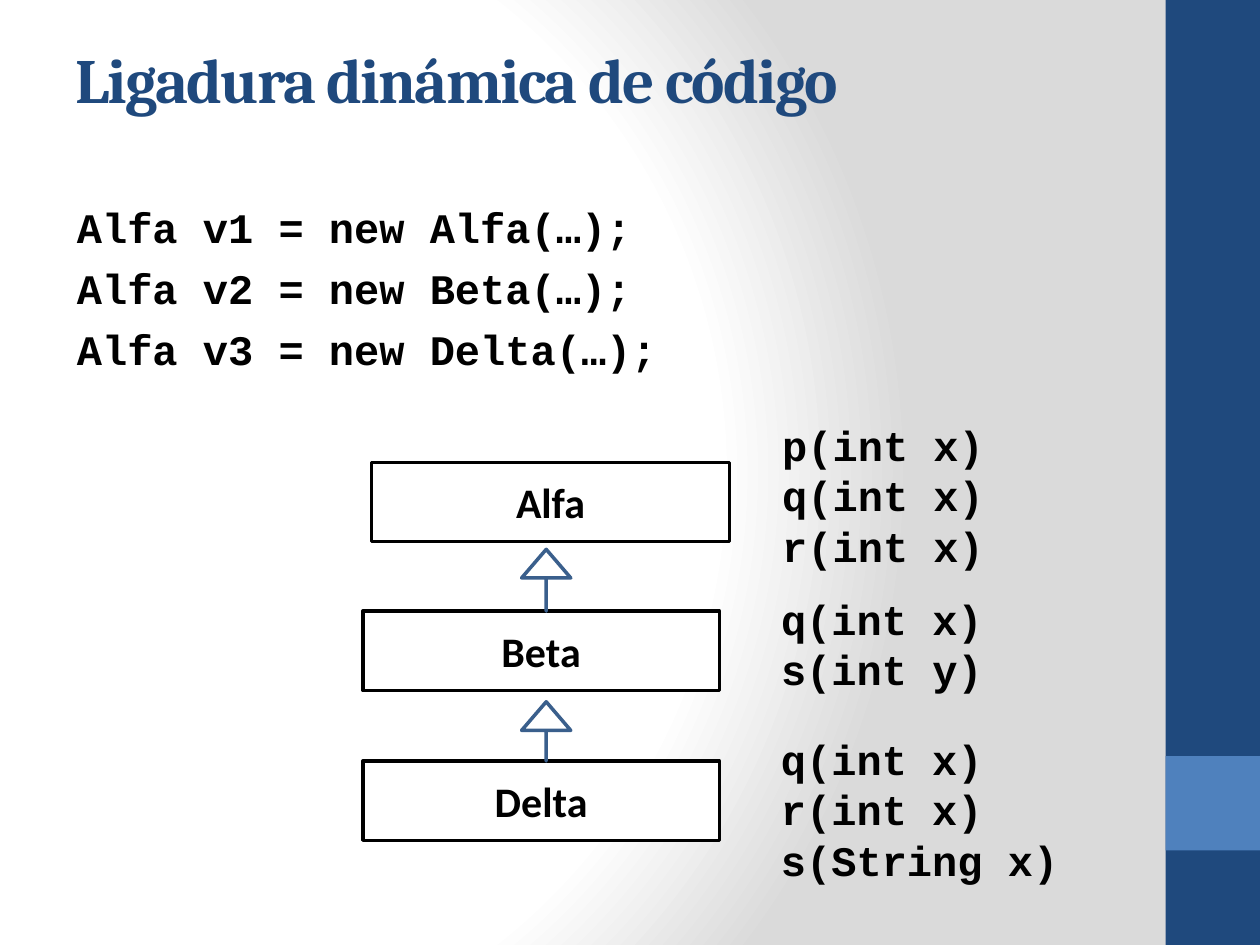
import pptx
import pptx.dml.color
import pptx.enum.shapes
import pptx.enum.text
import pptx.oxml
import pptx.oxml.ns
import pptx.util
from dataclasses import dataclass
from pptx.util import Inches

SHAPES = pptx.enum.shapes.MSO_SHAPE
ALIGN = pptx.enum.text.PP_ALIGN
ANCHOR = pptx.enum.text.MSO_ANCHOR
AUTO_SIZE = pptx.enum.text.MSO_AUTO_SIZE


@dataclass(frozen=True)
class Theme:
    navy: str = "1F497D"
    blue: str = "4F81BD"
    arrow: str = "3A5F8C"
    black: str = "000000"
    white: str = "FFFFFF"
    grey: str = "DADADA"
    title_font: str = "Cambria"
    box_font: str = "Calibri"
    code_font: str = "Courier New"
    title_size: int = 36
    text_size: int = 24
    code_pitch: float = 28.8
    outline: int = 2


THEME = Theme()


def rgb(value):
    return pptx.dml.color.RGBColor.from_string(value)


def add_run(paragraph, text, font, size, color):
    run = paragraph.add_run()
    run.text = text
    run.font.name = font
    run.font.size = pptx.util.Pt(size)
    run.font.bold = True
    run.font.color.rgb = rgb(color)
    return run


def place(shape, left, top, width, height):
    shape.left, shape.top = Inches(left), Inches(top)
    shape.width, shape.height = Inches(width), Inches(height)


def set_background(slide):
    """Circular gradient from white to grey."""
    slide.background.fill.gradient()
    old = next(slide.element.iter(pptx.oxml.ns.qn("a:gradFill")))
    stops = "".join(
        f'<a:gs pos="{position * 1000}"><a:srgbClr val="{color}"/></a:gs>'
        for position, color in ((0, THEME.white), (75, THEME.white), (100, THEME.grey)))
    gradient = pptx.oxml.parse_xml(
        f'<a:gradFill {pptx.oxml.ns.nsdecls("a")} rotWithShape="1"><a:gsLst>{stops}</a:gsLst>'
        '<a:path path="circle"><a:fillToRect l="20000" t="50000" r="100000" b="50000"/>'
        '</a:path></a:gradFill>')
    old.getparent().replace(old, gradient)


def add_figure(slide, kind, frame, fill, line=None):
    shape = slide.shapes.add_shape(kind, *map(Inches, frame))
    shape.shadow.inherit = False
    shape.fill.solid()
    shape.fill.fore_color.rgb = rgb(fill)
    if line:
        shape.line.color.rgb = rgb(line)
        shape.line.width = pptx.util.Pt(THEME.outline)
    else:
        shape.line.fill.background()
    return shape


def add_class_box(slide, name, left, top, width):
    box = add_figure(slide, SHAPES.RECTANGLE, (left, top, width, 0.63), THEME.white, THEME.black)
    box.text_frame.word_wrap = False
    box.text_frame.vertical_anchor = ANCHOR.MIDDLE
    paragraph = box.text_frame.paragraphs[0]
    paragraph.alignment = ALIGN.CENTER
    add_run(paragraph, name, THEME.box_font, THEME.text_size, THEME.black)


def add_inheritance_arrow(slide, left, top, length):
    """Hollow triangle on a thin stem, turned to point upward."""
    arrow = add_figure(slide, SHAPES.LEFT_ARROW, (left, top, length, 0.39),
                       THEME.white, THEME.arrow)
    arrow.adjustments[0] = 0
    arrow.adjustments[1] = 0.583
    arrow.rotation = 90


def write_code(frame, lines, space_before=0):
    frame.word_wrap = True
    frame.auto_size = AUTO_SIZE.SHAPE_TO_FIT_TEXT
    frame.vertical_anchor = ANCHOR.TOP
    for index, line in enumerate(lines):
        paragraph = frame.add_paragraph() if index else frame.paragraphs[0]
        paragraph.alignment = ALIGN.LEFT
        paragraph.line_spacing = pptx.util.Pt(THEME.code_pitch)
        paragraph.space_before = pptx.util.Pt(space_before)
        add_run(paragraph, line, THEME.code_font, THEME.text_size, THEME.black)


def add_methods(slide, lines, left, top, width):
    box = slide.shapes.add_textbox(*map(Inches, (left, top, width, 1.31)))
    write_code(box.text_frame, lines)


def fill_title(title, text):
    place(title, 0.5, 0, 8.33, 1.25)
    title.text_frame.auto_size = AUTO_SIZE.NONE
    title.text_frame.vertical_anchor = ANCHOR.MIDDLE
    paragraph = title.text_frame.paragraphs[0]
    paragraph.alignment = ALIGN.LEFT
    run = add_run(paragraph, text, THEME.title_font, THEME.title_size, THEME.navy)
    run.font.element.set("spc", "-100") if hasattr(run.font, "element") else \
        run._r.get_or_add_rPr().set("spc", "-100")


def fill_declarations(body, lines):
    place(body, 0.51, 1.55, 8.24, 1.48)
    write_code(body.text_frame, lines, space_before=6)
    for paragraph in body.text_frame.paragraphs:
        properties = paragraph._p.get_or_add_pPr()
        properties.set("marL", "0")
        properties.set("indent", "0")
        properties.append(pptx.oxml.parse_xml(f'<a:buNone {pptx.oxml.ns.nsdecls("a")}/>'))


def main():
    presentation = pptx.Presentation()
    presentation.slide_width, presentation.slide_height = Inches(10), Inches(7.5)
    slide = presentation.slides.add_slide(presentation.slide_layouts[1])

    # Background and side band
    set_background(slide)
    add_figure(slide, SHAPES.RECTANGLE, (9.25, 0, 0.75, 7.5), THEME.navy)
    add_figure(slide, SHAPES.RECTANGLE, (9.25, 6, 0.75, 0.75), THEME.blue)

    # Title and variable declarations
    fill_title(slide.shapes.title, "Ligadura dinámica de código")
    fill_declarations(slide.placeholders[1], [
        f"Alfa v{number} = new {name}(…);"
        for number, name in enumerate(("Alfa", "Beta", "Delta"), 1)])

    # Class hierarchy
    add_class_box(slide, "Alfa", 2.95, 3.67, 2.84)
    add_class_box(slide, "Beta", 2.88, 4.85, 2.83)
    add_inheritance_arrow(slide, 4.09, 4.41, 0.49)
    add_class_box(slide, "Delta", 2.88, 6.04, 2.83)
    add_inheritance_arrow(slide, 4.1, 5.61, 0.47)

    # Methods of each class
    add_methods(slide, ["p(int x) q(int x)", "r(int x)"], 6.11, 3.28, 2.2)
    add_methods(slide, ["q(int x)", "s(int y)"], 6.1, 4.66, 1.81)
    add_methods(slide, ["q(int x)", "r(int x)", "s(String x)"], 6.1, 5.77, 2.44)

    presentation.save("out.pptx")


if __name__ == "__main__":
    main()
